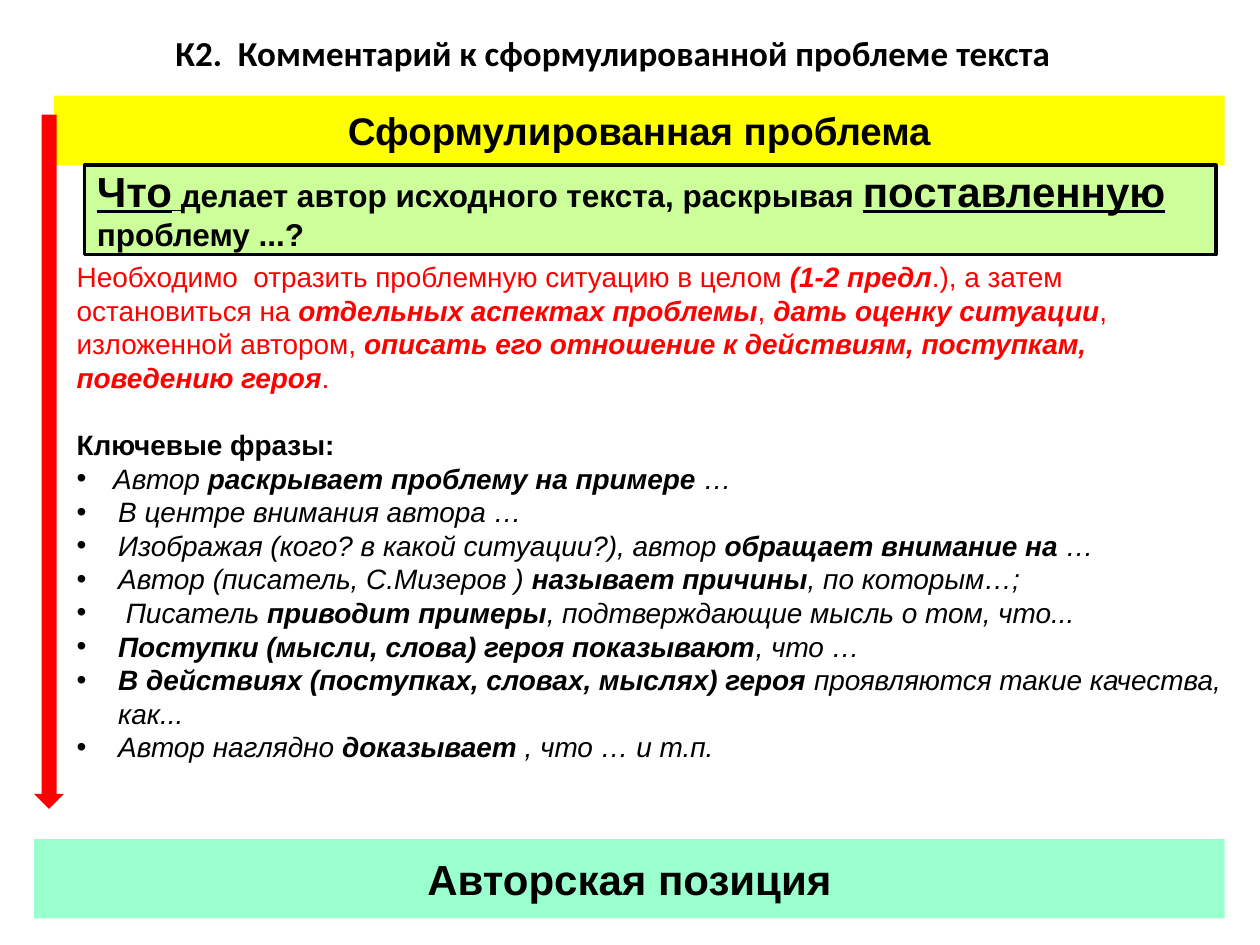
import pptx
import pptx.util
import pptx.dml.color
import pptx.enum.shapes
import pptx.enum.text
import lxml.etree

Inches = pptx.util.Inches
Pt = pptx.util.Pt
RGB = pptx.dml.color.RGBColor
Shape = pptx.enum.shapes.MSO_SHAPE
Align = pptx.enum.text.PP_ALIGN
Anchor = pptx.enum.text.MSO_ANCHOR

BLACK = RGB(0, 0, 0)
WHITE = RGB(255, 255, 255)
RED = RGB(255, 0, 0)
YELLOW = RGB(255, 255, 0)
MINT = RGB(0x99, 0xFF, 0xCC)
LIME = RGB(0xCC, 0xFF, 0x99)

ADVICE = (
    "Необходимо  отразить проблемную ситуацию в целом *(1-2 предл*.), а затем "
    "остановиться на *отдельных аспектах проблемы*, *дать оценку ситуации*, "
    "изложенной автором, *описать его отношение к действиям, поступкам, "
    "поведению героя*."
)
PHRASES = [
    (0.29, "Автор *раскрывает проблему на примере *…"),
    (0.33, "В центре внимания автора …"),
    (0.33, "Изображая (кого? в какой ситуации?), автор *обращает внимание на *…"),
    (0.33, "Автор (писатель, С.Мизеров ) *называет причины*, по которым…;"),
    (0.39, "Писатель *приводит примеры*, подтверждающие мысль о том, что..."),
    (0.33, "*Поступки (мысли, слова) героя показывают*, что …"),
    (0.33, "*В действиях (поступках, словах, мыслях) героя *проявляются такие качества, как..."),
    (0.33, "Автор наглядно *доказывает* , что … и т.п."),
]
QUESTION = [
    ("Что", 24, True),
    (" ", 18, True),
    ("делает автор исходного текста, раскрывая ", 18, False),
    ("поставленную ", 24, True),
    ("проблему ...?", 18, False),
]


def style(run, size, color=BLACK, bold=True, face="Arial"):
    font = run.font
    font.name = face
    font.size = Pt(size)
    font.bold = bold
    font.color.rgb = color
    return font


def block(slide, box, fill, kind=Shape.RECTANGLE):
    shape = slide.shapes.add_shape(kind, *map(Inches, box))
    shape.shadow.inherit = False
    shape.fill.solid()
    shape.fill.fore_color.rgb = fill
    shape.line.fill.background()
    return shape


def title(slide, box):
    head = slide.shapes.title
    head.left, head.top, head.width, head.height = map(Inches, box)
    frame = head.text_frame
    frame.text = "К2.  Комментарий к сформулированной проблеме текста"
    frame.vertical_anchor = Anchor.MIDDLE
    para = frame.paragraphs[0]
    para.alignment = Align.CENTER
    style(para.runs[0], 20, face="Calibri")


def banner(slide, box, fill, text, size):
    frame = block(slide, box, fill).text_frame
    frame.text = text
    para = frame.paragraphs[0]
    para.alignment = Align.CENTER
    style(para.runs[0], size)


def mark(para, text, color, slant):
    for index, part in enumerate(text.split("*")):
        if part:
            run = para.add_run()
            run.text = part
            bold = index % 2 == 1
            style(run, 16, color, bold).italic = bold or slant


def bullet(para, indent):
    props = para._p.get_or_add_pPr()
    props.set("marL", str(Inches(indent)))
    props.set("indent", str(-Inches(indent)))
    space = "{http://schemas.openxmlformats.org/drawingml/2006/main}"
    lxml.etree.SubElement(props, space + "buFont").set("typeface", "Arial")
    lxml.etree.SubElement(props, space + "buChar").set("char", "•")


def body(slide, box):
    frame = block(slide, box, WHITE).text_frame
    para = frame.paragraphs[0]
    mark(para, ADVICE, RED, False)
    label = frame.add_paragraph()
    label.text = "Ключевые фразы:"
    label.space_before = Pt(19.2)
    style(label.runs[0], 16)
    for indent, text in PHRASES:
        para = frame.add_paragraph()
        mark(para, text, BLACK, True)
        bullet(para, indent)
    for para in frame.paragraphs:
        para.alignment = Align.LEFT
        para.line_spacing = Pt(19.2)


def question(slide, box):
    shape = block(slide, box, LIME)
    shape.line.color.rgb = BLACK
    shape.line.width = Pt(2)
    frame = shape.text_frame
    frame.vertical_anchor = Anchor.TOP
    frame.margin_top = frame.margin_bottom = 0
    para = frame.paragraphs[0]
    para.alignment = Align.LEFT
    for text, size, under in QUESTION:
        run = para.add_run()
        run.text = text
        style(run, size).underline = under


def main():
    deck = pptx.Presentation()
    deck.slide_width, deck.slide_height = Inches(10), Inches(7.5)
    slide = deck.slides.add_slide(deck.slide_layouts[5])
    title(slide, (0, 0.21, 9.73, 0.42))
    banner(slide, (0.43, 0.76, 9.29, 0.55), YELLOW, "Сформулированная проблема", 22)
    banner(slide, (0.27, 6.66, 9.45, 0.63), MINT, "Авторская позиция", 24)
    body(slide, (0.51, 1.62, 9.29, 4.88))
    question(slide, (0.67, 1.31, 8.98, 0.71))
    block(slide, (0.27, 0.91, 0.24, 5.51), RED, Shape.DOWN_ARROW)
    deck.save("out.pptx")


if __name__ == "__main__":
    main()
